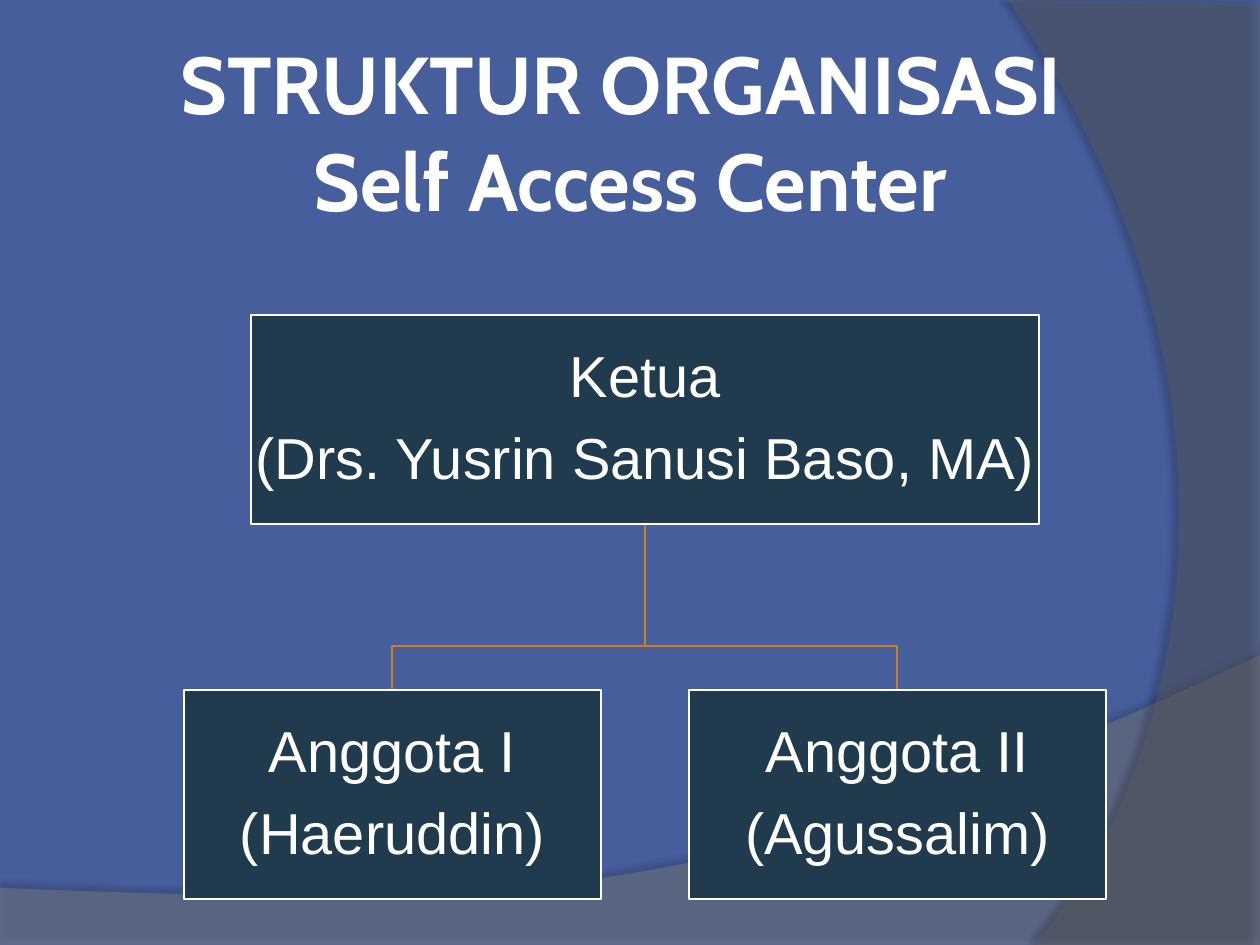
"""Build the organisation chart slide of the Self Access Center."""
from dataclasses import dataclass

import pptx
import pptx.dml.color
import pptx.enum.shapes
import pptx.enum.text
import pptx.oxml
import pptx.oxml.ns
import pptx.util

PX = 914400 / 126
WHITE, NAVY, ORANGE, BLUE = "FFFFFF", "203A4E", "CB801C", "465E9C"
TITLE_FORMAT = {"size": pptx.util.Pt(46), "name": "Cabin", "bold": True}
BOX_FORMAT = {"size": pptx.util.Pt(33), "name": "Arial"}
BOX_SPACING = {"line_spacing": 0.9, "space_after": pptx.util.Pt(11)}
CENTER = pptx.enum.text.PP_ALIGN.CENTER
MIDDLE = pptx.enum.text.MSO_ANCHOR.MIDDLE
NS = pptx.oxml.ns.nsdecls("a")

Point = tuple[int, int]


@dataclass(frozen=True)
class Box:
    left: int
    top: int
    width: int
    height: int
    lines: tuple[str, ...]

    @property
    def center(self) -> int:
        return self.left + self.width // 2


@dataclass(frozen=True)
class Swoosh:
    edges: tuple[Point, ...]
    curve: tuple[Point, Point, Point]
    color: str
    alpha: int
    shadow_alpha: int
    shadow_distance: float
    shadow_angle: int


SWOOSHES = (
    Swoosh(((0, 888), (0, 946), (1260, 946), (1260, 655)),
           ((704, 919), (493, 906), (0, 888)), "7F7F7F", 45, 35, 3.5, 270),
    Swoosh(((1260, 3), (1260, 945), (1034, 945)),
           ((1178, 780), (1283, 402), (1008, 0)), "5E5E5E", 40, 45, 4, 180),
)
TITLE = Box(0, 38, 1260, 186, ("STRUKTUR ORGANISASI \vSelf Access Center",))
HEAD = Box(251, 315, 788, 209, ("Ketua", "(Drs. Yusrin Sanusi Baso, MA)"))
MEMBERS = tuple(
    Box(184 + 505 * i, 690, 417, 209, lines)
    for i, lines in enumerate((("Anggota I", "(Haeruddin)"),
                               ("Anggota II", "(Agussalim)")))
)
FORK_Y = 646


def emu(px: float) -> int:
    return round(px * PX)


def rgb(color: str) -> pptx.dml.color.RGBColor:
    return pptx.dml.color.RGBColor.from_string(color)


def set_format(target, values: dict) -> None:
    for name, value in values.items():
        setattr(target, name, value)


def set_fill(sp, color: str) -> None:
    sp.fill.solid()
    sp.fill.fore_color.rgb = rgb(color)


def set_line(sp, color: str) -> None:
    sp.line.color.rgb = rgb(color)
    sp.line.width = pptx.util.Pt(1.5)


def add_path(s, points: list, close: bool):
    builder = s.shapes.build_freeform(*points[0], scale=PX)
    builder.add_line_segments(points[1:], close=close)
    sp = builder.convert_to_shape()
    sp.shadow.inherit = False
    return sp


def bend_last_edge(sp, points: list, curve: tuple[Point, Point, Point]) -> None:
    left, top = (min(axis) for axis in zip(*points))
    pts = "".join(f'<a:pt x="{x - left}" y="{y - top}"/>' for x, y in curve)
    edge = sp.element.spPr.findall(".//" + pptx.oxml.ns.qn("a:lnTo"))[-1]
    edge.getparent().replace(
        edge, pptx.oxml.parse_xml(f"<a:cubicBezTo {NS}>{pts}</a:cubicBezTo>"))


def add_swoosh(s, swoosh: Swoosh) -> None:
    points = [*swoosh.edges, swoosh.curve[-1]]
    sp = add_path(s, points, True)
    bend_last_edge(sp, points, swoosh.curve)
    set_fill(sp, swoosh.color)
    sp.line.fill.background()
    fill = sp.element.spPr.find(".//" + pptx.oxml.ns.qn("a:srgbClr"))
    fill.append(pptx.oxml.parse_xml(f'<a:alpha {NS} val="{swoosh.alpha * 1000}"/>'))
    effects = sp.element.spPr.find(pptx.oxml.ns.qn("a:effectLst"))
    effects.append(pptx.oxml.parse_xml(
        f'<a:outerShdw {NS} blurRad="{pptx.util.Pt(4)}" '
        f'dist="{pptx.util.Pt(swoosh.shadow_distance)}" '
        f'dir="{swoosh.shadow_angle * 60000}" algn="ctr" rotWithShape="0">'
        f'<a:srgbClr val="000000"><a:alpha val="{swoosh.shadow_alpha * 1000}"/>'
        '</a:srgbClr></a:outerShdw>'))


def add_text(sp, lines: tuple[str, ...], inset: int, font: dict, spacing: dict) -> None:
    tf = sp.text_frame
    sides = ("left", "right", "top", "bottom")
    set_format(tf, {f"margin_{side}": emu(inset) for side in sides})
    set_format(tf, {"word_wrap": True, "vertical_anchor": MIDDLE})
    tf.text = "\n".join(lines)
    for p in tf.paragraphs:
        set_format(p, {"alignment": CENTER, **spacing})
        for r in p.runs:
            set_format(r.font, font)
            r.font.color.rgb = rgb(WHITE)


def add_title(s, box: Box) -> None:
    sp = s.shapes.add_textbox(*map(emu, (box.left, box.top, box.width, box.height)))
    add_text(sp, box.lines, 6, TITLE_FORMAT, {})


def add_box(s, box: Box) -> None:
    sp = s.shapes.add_shape(
        pptx.enum.shapes.MSO_SHAPE.RECTANGLE,
        *map(emu, (box.left, box.top, box.width, box.height)))
    sp.shadow.inherit = False
    set_fill(sp, NAVY)
    set_line(sp, WHITE)
    add_text(sp, box.lines, 3, BOX_FORMAT, BOX_SPACING)


def add_branch(s, parent: Box, child: Box) -> None:
    sp = add_path(s, [(parent.center, parent.top + parent.height),
                      (parent.center, FORK_Y),
                      (child.center, FORK_Y),
                      (child.center, child.top)], False)
    sp.fill.background()
    set_line(sp, ORANGE)


def main() -> None:
    prs = pptx.Presentation()
    set_format(prs, {"slide_width": emu(1260), "slide_height": emu(945)})
    s = prs.slides.add_slide(prs.slide_layouts[6])
    set_fill(s.background, BLUE)
    for swoosh in SWOOSHES:
        add_swoosh(s, swoosh)
    add_title(s, TITLE)
    for member in reversed(MEMBERS):
        add_branch(s, HEAD, member)
    for box in (HEAD, *MEMBERS):
        add_box(s, box)
    prs.save("out.pptx")


if __name__ == "__main__":
    main()
